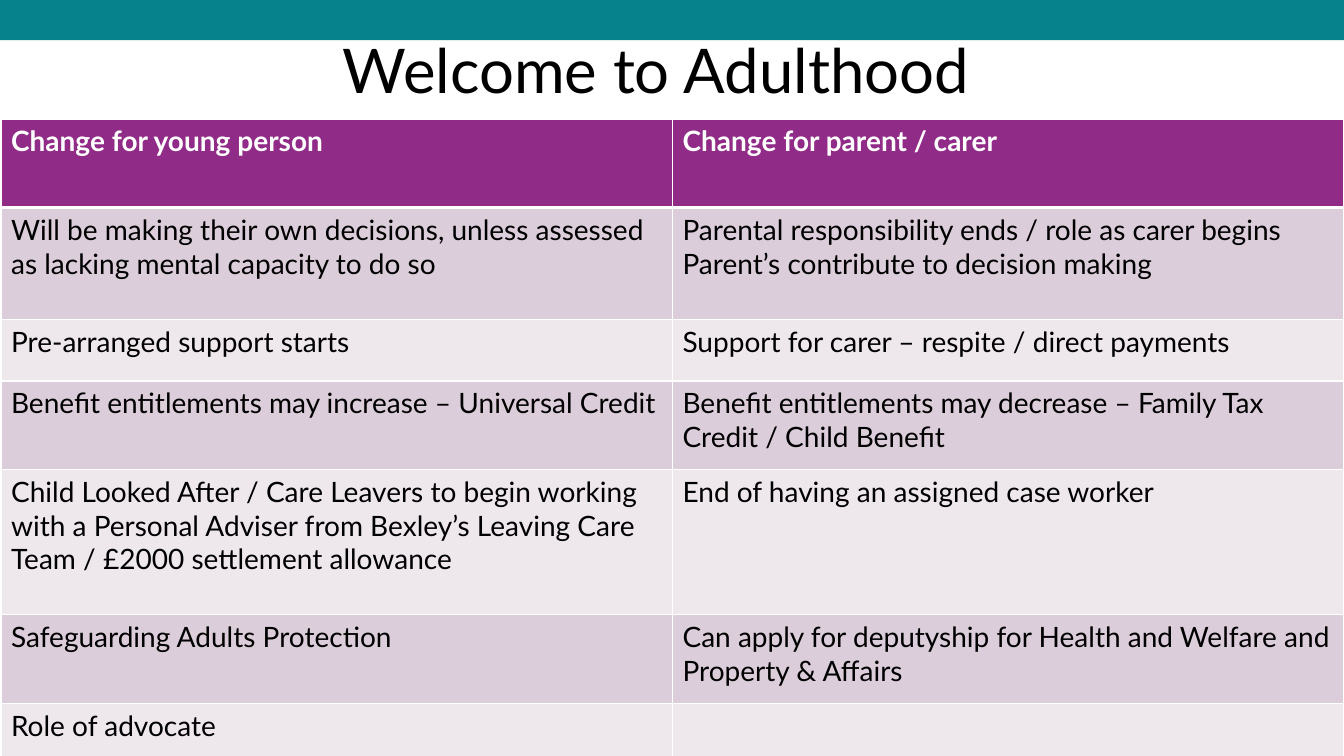
from lxml import etree
from pptx import Presentation
from pptx.dml.color import RGBColor as RGB
from pptx.enum.shapes import MSO_SHAPE as SHAPE
from pptx.enum.text import MSO_ANCHOR as ANCHOR, PP_ALIGN as ALIGN
from pptx.oxml.ns import qn
from pptx.util import Inches, Pt

FONT = "Lato"
HEX = {"teal": "06828D", "plum": "912B88", "dark": "DCCDDA",
       "light": "EEE8ED", "white": "FFFFFF", "black": "000000"}


def write(para, text, size, color, bold=False):
    run = para.add_run()
    run.text = text
    run.font.name = FONT
    run.font.size = Pt(size)
    run.font.bold = bold
    run.font.color.rgb = RGB.from_string(HEX[color])


def edge(cell, head):
    # Border lines must come before the fill in the cell properties
    props = cell._tc.get_or_add_tcPr()
    for i, side in enumerate(("lnL", "lnR", "lnT", "lnB")):
        width = 3 if head and side == "lnB" else 1
        line = etree.Element(qn(f"a:{side}"), w=str(Pt(width)))
        fill = etree.SubElement(line, qn("a:solidFill"))
        etree.SubElement(fill, qn("a:srgbClr"), val=HEX["white"])
        props.insert(i, line)


prs = Presentation()
prs.slide_width = Inches(13.33)
prs.slide_height = Inches(7.5)
slide = prs.slides.add_slide(prs.slide_layouts[5])

# Title
title = slide.shapes.title
title.left, title.top = Inches(3.3), Inches(0.27)
title.width, title.height = Inches(6.74), Inches(0.91)
frame = title.text_frame
frame.vertical_anchor = ANCHOR.MIDDLE
para = frame.paragraphs[0]
para.alignment = ALIGN.LEFT
para.line_spacing = 0.9
write(para, "Welcome to Adulthood", 44, "black")

# Top band, behind the title
band = slide.shapes.add_shape(SHAPE.RECTANGLE, 0, 0, prs.slide_width, Inches(0.4))
band.shadow.inherit = False
band.fill.solid()
band.fill.fore_color.rgb = RGB.from_string(HEX["teal"])
band.line.fill.background()
title._element.addprevious(band._element)

# Table of changes: row height, young person, parent or carer
rows = [
    (0.88, "Change for young person", "Change for parent / carer"),
    (1.11, "Will be making their own decisions, unless assessed as lacking "
           "mental capacity to do so",
     "Parental responsibility ends / role as carer begins\n"
     "Parent’s contribute to decision making"),
    (0.61, "Pre-arranged support starts",
     "Support for carer – respite / direct payments"),
    (0.88, "Benefit entitlements may increase – Universal Credit",
     "Benefit entitlements may decrease – Family Tax Credit / Child Benefit"),
    (1.44, "Child Looked After / Care Leavers to begin working with a Personal "
           "Adviser from Bexley’s Leaving Care Team / £2000 settlement allowance",
     "End of having an assigned case worker"),
    (0.88, "Safeguarding Adults Protection",
     "Can apply for deputyship for Health and Welfare and Property & Affairs"),
    (0.88, "Role of advocate", ""),
]
total = sum(row[0] for row in rows)
table = slide.shapes.add_table(len(rows), 2, Inches(0.01), Inches(1.18),
                               Inches(13.32), Inches(total)).table
for col in table.columns:
    col.width = Inches(6.66)

for r, (height, *texts) in enumerate(rows):
    table.rows[r].height = Inches(height)
    head = r == 0
    shade = "plum" if head else "dark" if r % 2 else "light"
    for c, text in enumerate(texts):
        cell = table.cell(r, c)
        cell.fill.solid()
        cell.fill.fore_color.rgb = RGB.from_string(HEX[shade])
        edge(cell, head)
        if not text:
            continue
        frame = cell.text_frame
        for i, part in enumerate(text.split("\n")):
            para = frame.add_paragraph() if i else frame.paragraphs[0]
            write(para, part, 20, "white" if head else "black", head)

prs.save("out.pptx")
